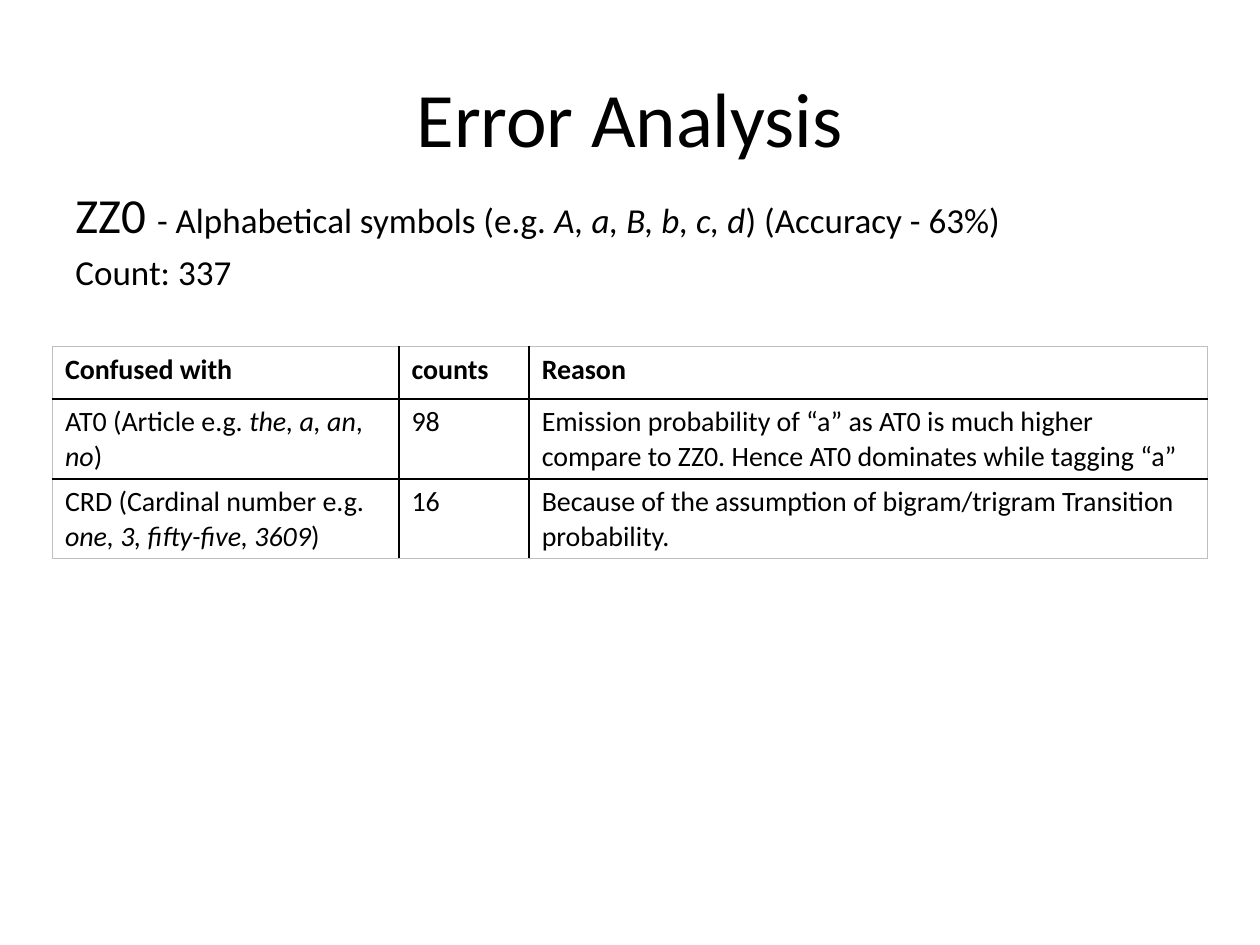
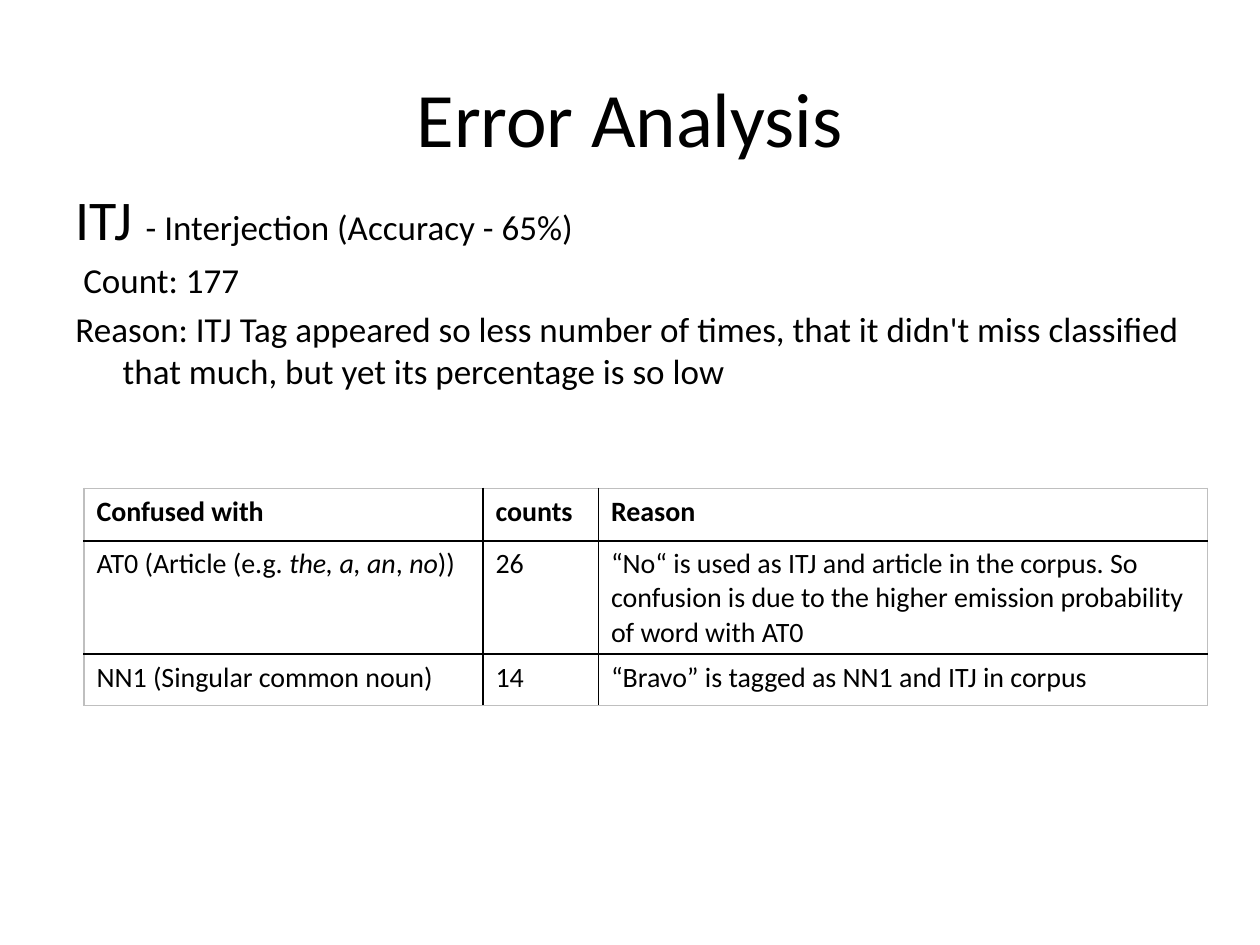
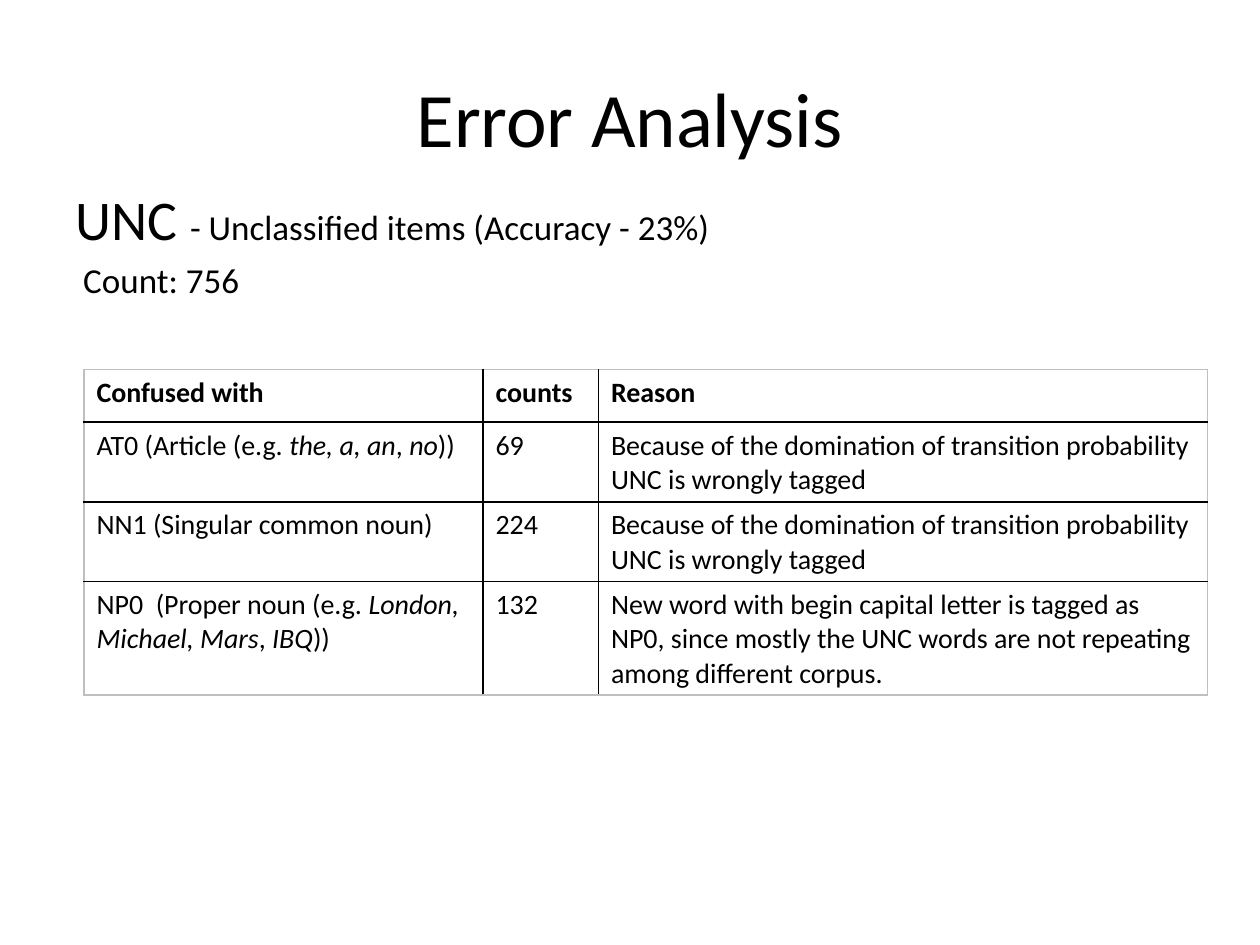
"""Build three error-analysis slides, each with a tag summary and a confusion table."""
from dataclasses import dataclass

from lxml import etree
from pptx import Presentation
from pptx import util as u
from pptx.dml.color import RGBColor
from pptx.enum import text
from pptx.oxml import ns


@dataclass(frozen=True)
class Theme:
    """Colours, font and type sizes shared by all slides."""
    font: str = "Calibri"
    ink: str = "000000"
    paper: str = "FFFFFF"
    edge: str = "BFBFBF"
    title: float = 44
    body: float = 20
    cell: float = 16
    border: float = 1
    space_before: int = 20
    indent: float = 4.5


@dataclass(frozen=True)
class Area:
    """A rectangle in columns and rows of the slide grid."""
    left: float
    top: float
    width: float
    height: float


@dataclass(frozen=True)
class Span:
    """A stretch of text in one format."""
    words: str
    size: float
    bold: bool = False
    italic: bool = False


@dataclass(frozen=True)
class Confusion:
    """A table row: the tag confused with, how often and why."""
    tag: str
    count: str
    reason: str


@dataclass(frozen=True)
class Analysis:
    """One slide about one tag; asterisks enclose italic words."""
    tag: str
    tag_size: float
    meaning: str
    notes: tuple[str, ...]
    body_width: float
    table_left: float
    table_top: float
    columns: tuple[float, ...]
    confusions: tuple[Confusion, ...]


THEME = Theme()
WIDTH, HEIGHT = u.Inches(10), u.Inches(7.5)
GRID_COLUMNS, GRID_ROWS = 120, 90
TITLE = Area(6, 3.6, 108, 15)
BODY_LEFT, BODY_TOP, BODY_HEIGHT = 6, 17, 63.4
HEADER_ROW, BODY_ROW = 5, 4.9
HEADER = Confusion("Confused with", "counts", "Reason")
NARROW_TABLE = (38, 11, 58)
ARTICLE = "AT0 (Article (e.g. *the, a, an*, *no*))"
NOUN = "NN1 (Singular common noun)"
DOMINATION = "Because of the domination of transition probability UNC is wrongly tagged"

ANALYSES = (
    Analysis(
        "ZZ0 ", 28, "- Alphabetical symbols (e.g. *A, a, B, b, c, d*) (Accuracy - 63%)",
        ("Count: 337",), 108, 5, 33, (33, 12.4, 64.6),
        (
            Confusion("AT0 (Article e.g. *the, a, an*, *no*)", "98",
                      "Emission probability of “a” as AT0 is much higher compare to ZZ0. "
                      "Hence AT0 dominates while tagging “a”"),
            Confusion("CRD (Cardinal number e.g. *one, 3, fifty-five, 3609*)", "16",
                      "Because of the assumption of bigram/trigram Transition probability."),
        ),
    ),
    Analysis(
        "ITJ ", 32, "- Interjection (Accuracy - 65%)",
        (" Count: 177",
         "Reason: ITJ Tag appeared so less number of times, that it didn't miss classified "
         "that much, but yet its percentage is so low"),
        111, 8, 46.5, NARROW_TABLE,
        (
            Confusion(ARTICLE, "26",
                      "“No“ is used as ITJ and article in the corpus. So confusion is due to "
                      "the higher emission probability of word with AT0"),
            Confusion(NOUN, "14", "“Bravo” is tagged as NN1 and ITJ in corpus"),
        ),
    ),
    Analysis(
        "UNC ", 32, "- Unclassified items (Accuracy - 23%)",
        (" Count: 756",), 108, 8, 35.2, NARROW_TABLE,
        (
            Confusion(ARTICLE, "69", DOMINATION),
            Confusion(NOUN, "224", DOMINATION),
            Confusion("NP0  (Proper noun (e.g. *London, Michael, Mars*, *IBQ*))", "132",
                      "New word with begin capital letter is tagged as NP0, since mostly the "
                      "UNC words are not repeating among different corpus."),
        ),
    ),
)


def across(columns: float) -> int:
    """Turn grid columns into a length."""
    return round(WIDTH * columns / GRID_COLUMNS)


def down(rows: float) -> int:
    """Turn grid rows into a length."""
    return round(HEIGHT * rows / GRID_ROWS)


def place(area: Area) -> tuple[int, int, int, int]:
    """Give the position and size of an area."""
    return across(area.left), down(area.top), across(area.width), down(area.height)


def spans(marked: str, size: float, bold: bool = False) -> list[Span]:
    """Split marked words into upright and italic spans."""
    return [Span(words, size, bold, index % 2 == 1)
            for index, words in enumerate(marked.split("*")) if words]


def write(para, parts: list[Span]) -> None:
    """Add formatted spans to a paragraph."""
    for part in parts:
        span = para.add_run()
        span.text = part.words
        formats = {"name": THEME.font, "size": u.Pt(part.size),
                   "bold": part.bold, "italic": part.italic}
        for name, value in formats.items():
            setattr(span.font, name, value)
        span.font.color.rgb = RGBColor.from_string(THEME.ink)


def hang(para) -> None:
    """Give a paragraph a hanging indent and proportional space before."""
    properties = para._p.get_or_add_pPr()
    properties.set("marL", str(across(THEME.indent)))
    properties.set("indent", str(-across(THEME.indent)))
    before = etree.SubElement(properties, ns.qn("a:spcBef"))
    etree.SubElement(before, ns.qn("a:spcPct"), val=str(THEME.space_before * 1000))


def add_box(page, area: Area, anchor):
    """Add a wrapping text box and return its text frame."""
    frame = page.shapes.add_textbox(*place(area)).text_frame
    for name, value in {"word_wrap": True, "vertical_anchor": anchor}.items():
        setattr(frame, name, value)
    return frame


def add_title(page) -> None:
    """Add the shared slide title."""
    para = add_box(page, TITLE, text.MSO_ANCHOR.MIDDLE).paragraphs[0]
    para.alignment = text.PP_ALIGN.CENTER
    write(para, [Span("Error Analysis", THEME.title)])


def add_summary(page, analysis: Analysis) -> None:
    """Add the tag, its meaning and its notes."""
    area = Area(BODY_LEFT, BODY_TOP, analysis.body_width, BODY_HEIGHT)
    frame = add_box(page, area, text.MSO_ANCHOR.TOP)
    lead = [Span(analysis.tag, analysis.tag_size), *spans(analysis.meaning, THEME.body)]
    lines = [lead, *(spans(note, THEME.body) for note in analysis.notes)]
    for index, line in enumerate(lines):
        para = frame.add_paragraph() if index else frame.paragraphs[0]
        hang(para)
        write(para, line)


def style_cell(cell, outer: dict[str, bool]) -> None:
    """Draw a cell's borders, paler on the table's outside, and fill it."""
    properties = cell._tc.get_or_add_tcPr()
    for side, is_outer in outer.items():
        line = etree.SubElement(properties, ns.qn(f"a:ln{side}"), w=str(u.Pt(THEME.border)))
        fill = etree.SubElement(line, ns.qn("a:solidFill"))
        etree.SubElement(fill, ns.qn("a:srgbClr"), val=THEME.edge if is_outer else THEME.ink)
    cell.fill.solid()
    cell.fill.fore_color.rgb = RGBColor.from_string(THEME.paper)


def add_confusions(page, analysis: Analysis) -> None:
    """Add the table of confused tags."""
    records = (HEADER, *analysis.confusions)
    heights = [HEADER_ROW] + [BODY_ROW] * len(analysis.confusions)
    area = Area(analysis.table_left, analysis.table_top, sum(analysis.columns), sum(heights))
    table = page.shapes.add_table(len(records), len(analysis.columns), *place(area)).table
    for name in ("first_row", "horz_banding"):
        setattr(table, name, False)
    for column, width in zip(table.columns, analysis.columns):
        column.width = across(width)
    last_row, last_column = len(records) - 1, len(analysis.columns) - 1
    for y, (record, height) in enumerate(zip(records, heights)):
        table.rows[y].height = down(height)
        for x, words in enumerate((record.tag, record.count, record.reason)):
            cell = table.cell(y, x)
            style_cell(cell, {"L": x == 0, "R": x == last_column,
                              "T": y == 0, "B": y == last_row})
            write(cell.text_frame.paragraphs[0], spans(words, THEME.cell, bold=y == 0))


def main() -> None:
    """Build and save the deck."""
    deck = Presentation()
    deck.slide_width, deck.slide_height = WIDTH, HEIGHT
    for analysis in ANALYSES:
        page = deck.slides.add_slide(deck.slide_layouts[6])
        add_title(page)
        add_summary(page, analysis)
        add_confusions(page, analysis)
    deck.save("out.pptx")


if __name__ == "__main__":
    main()
